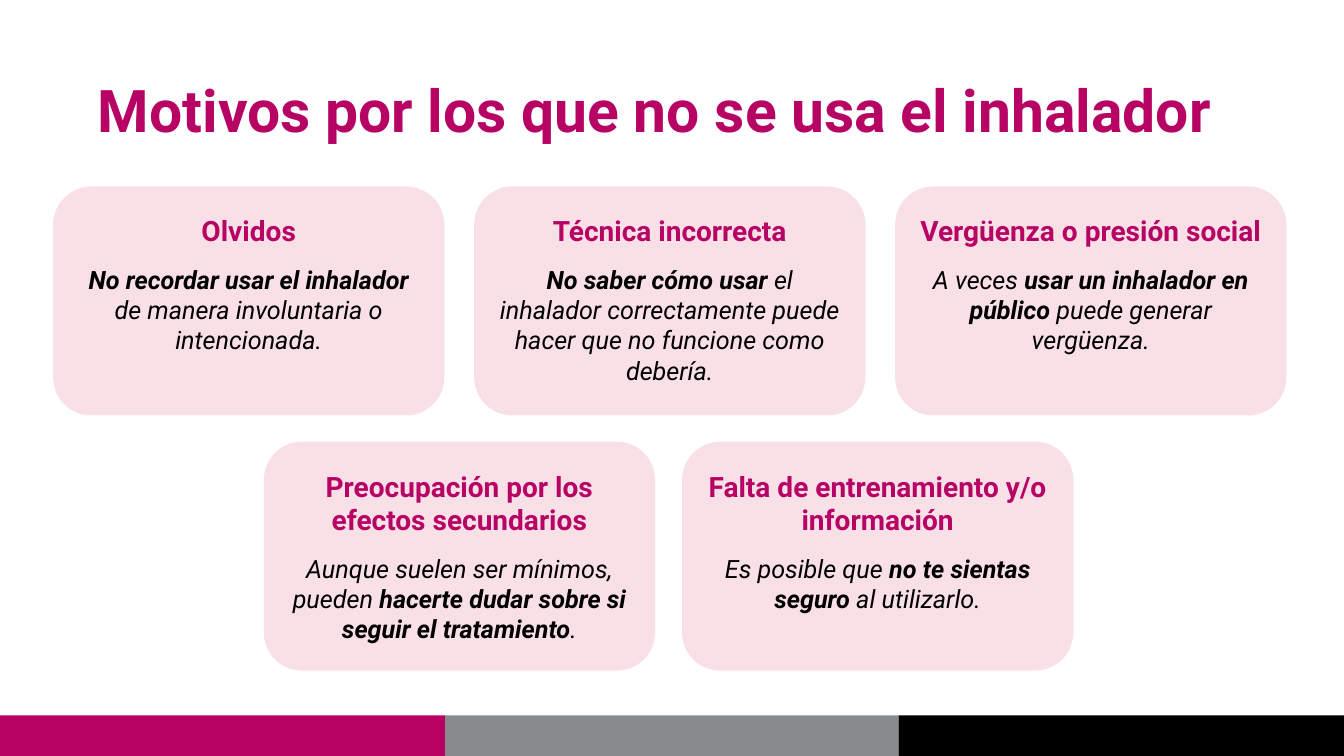
from pptx import Presentation
from pptx.dml.color import RGBColor
from pptx.enum.shapes import MSO_SHAPE
from pptx.enum.text import MSO_ANCHOR, PP_ALIGN
from pptx.util import Cm, Pt

WIDE, HIGH = 33.87, 19.05
PINK, ROSE, GREY, BLACK = "B70364", "F9E0E7", "888B8D", "000000"
CARD_W, CARD_H = 9.86, 5.77

# Each card: heading, then (text, bold) runs
TOP_ROW = [
    ("Olvidos", [
        ("No recordar usar el inhalador ", True),
        ("de manera involuntaria o intencionada.", False)]),
    ("Técnica incorrecta", [
        ("No saber cómo usar ", True),
        ("el inhalador correctamente puede hacer que no funcione "
         "como debería.", False)]),
    ("Vergüenza o presión social", [
        ("A veces ", False),
        ("usar un inhalador en público", True),
        (" puede generar vergüenza.", False)]),
]
LOW_ROW = [
    ("Preocupación por los efectos secundarios", [
        ("Aunque suelen ser mínimos, pueden ", False),
        ("hacerte dudar sobre si seguir el tratamiento", True),
        (".", False)]),
    ("Falta de entrenamiento y/o información", [
        ("Es posible que ", False),
        ("no te sientas seguro", True),
        (" al utilizarlo.", False)]),
]


def color(code):
    return RGBColor.from_string(code)


def add_run(para, text, size, code, bold=False, italic=False):
    run = para.add_run()
    run.text = text
    font = run.font
    font.name, font.size = "Roboto", Pt(size)
    font.bold, font.italic = bold, italic
    font.color.rgb = color(code)


def set_frame(frame, anchor, side, top, bottom):
    frame.word_wrap = True
    frame.vertical_anchor = anchor
    frame.margin_left = frame.margin_right = Cm(side)
    frame.margin_top, frame.margin_bottom = Cm(top), Cm(bottom)


def add_block(slide, kind, x, y, w, h, code):
    shape = slide.shapes.add_shape(kind, Cm(x), Cm(y), Cm(w), Cm(h))
    shape.shadow.inherit = False
    shape.fill.solid()
    shape.fill.fore_color.rgb = color(code)
    shape.line.fill.background()
    return shape


def add_title(slide, x, y, w, h):
    box = slide.shapes.add_textbox(Cm(x), Cm(y), Cm(w), Cm(h))
    set_frame(box.text_frame, MSO_ANCHOR.MIDDLE, 0.13, 0.13, 0.13)
    para = box.text_frame.paragraphs[0]
    para.line_spacing = 0.9
    add_run(para, "Motivos por los que no se usa el inhalador", 42, PINK, True)


def add_card(slide, x, y, w, h, head, body):
    card = add_block(slide, MSO_SHAPE.ROUNDED_RECTANGLE, x, y, w, h, ROSE)
    frame = card.text_frame
    set_frame(frame, MSO_ANCHOR.TOP, 0.25, 0.41, 0.13)
    para = frame.paragraphs[0]
    para.alignment = PP_ALIGN.CENTER
    para.space_after = Pt(12)
    add_run(para, head, 20, PINK, True)
    para = frame.add_paragraph()
    para.alignment = PP_ALIGN.CENTER
    for text, bold in body:
        add_run(para, text, 18, BLACK, bold, True)


def add_row(slide, x, y, gap, cards):
    for i, (head, body) in enumerate(cards):
        left = x + i * (CARD_W + gap)
        add_card(slide, left, y, CARD_W, CARD_H, head, body)


def add_footer(slide, x, y, w, h):
    """Fill the box with three bands of colour, side by side."""
    stops = [x, x + 11.22, x + 22.65, x + w]
    for left, right, code in zip(stops, stops[1:], (PINK, GREY, BLACK)):
        add_block(slide, MSO_SHAPE.RECTANGLE, left, y, right - left, h, code)


def main():
    deck = Presentation()
    deck.slide_width, deck.slide_height = Cm(WIDE), Cm(HIGH)
    slide = deck.slides.add_slide(deck.slide_layouts[6])
    add_footer(slide, 0, 18.03, WIDE, HIGH - 18.03)
    add_title(slide, 2.34, 1.02, 29.21, 3.68)
    add_row(slide, 1.34, 4.7, 0.75, TOP_ROW)
    add_row(slide, 6.65, 11.13, 0.68, LOW_ROW)
    deck.save("out.pptx")


if __name__ == "__main__":
    main()
